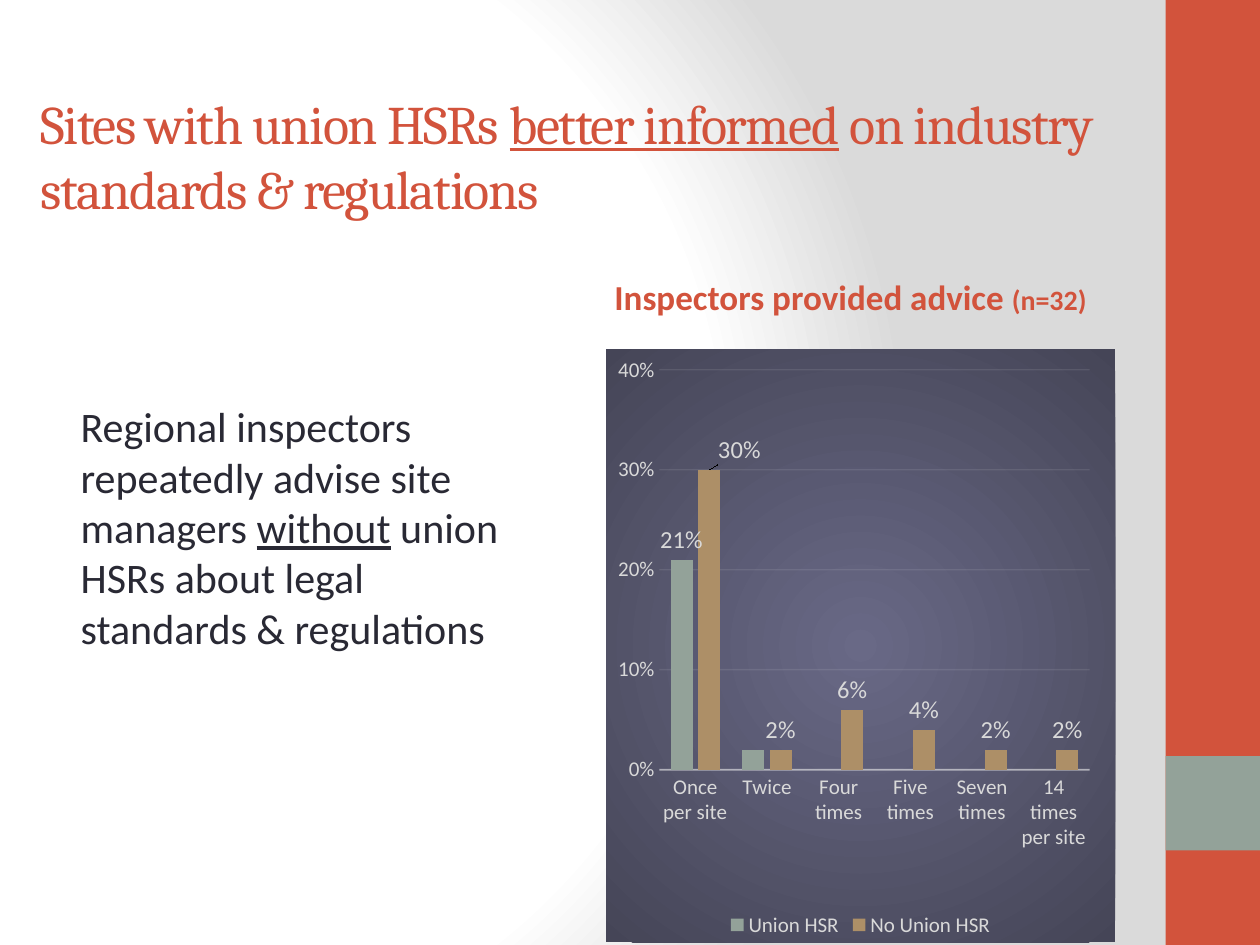
"""Build the slide comparing inspector advice at sites with and without union HSRs."""
from dataclasses import dataclass
from typing import Any, Optional

from lxml import etree
from pptx import Presentation, util as u
from pptx.chart.data import CategoryChartData
from pptx.dml.color import RGBColor
from pptx.enum import chart as ch, shapes, text
from pptx.oxml import ns, parse_xml

SCALE = 9144
COLORS = {
    "red": "D2533C", "sage": "93A299", "tan": "AD8F67", "ink": "292934",
    "label": "D9D9D9", "line": "F2F2F2", "white": "FFFFFF", "grey": "DADADA",
    "slate": "696986", "dusk": "454557",
}


@dataclass
class Box:
    left: int
    top: int
    width: int
    height: int

    def emu(self) -> list[int]:
        return [v * SCALE for v in (self.left, self.top, self.width, self.height)]


@dataclass
class Run:
    text: str
    size: int
    underline: bool = False


@dataclass
class Band:
    box: Box
    color: str


@dataclass
class TextBlock:
    box: Box
    runs: list[Run]
    color: str
    font: str
    frame: dict[str, Any]
    paragraph: dict[str, Any]
    bold: bool = False
    spacing: int = 0
    indent: int = 0


@dataclass
class Series:
    name: str
    values: list[Optional[float]]
    color: str
    point: int
    override: str


BANDS = [
    Band(Box(925, 0, 75, 750), "red"),
    Band(Box(925, 600, 75, 75), "sage"),
]
LEFT, CENTER = text.PP_ALIGN.LEFT, text.PP_ALIGN.CENTER
BLOCKS = [
    TextBlock(
        Box(22, 68, 917, 110),
        [Run("Sites with union HSRs ", 31), Run("better informed", 31, True),
         Run(" on industry standards & regulations", 31)],
        "red", "Cambria", {"vertical_anchor": text.MSO_ANCHOR.MIDDLE},
        {"alignment": LEFT}, spacing=-80),
    TextBlock(
        Box(444, 178, 462, 79),
        [Run("Inspectors provided advice ", 20), Run("(n=32)", 16)],
        "red", "Calibri", {"vertical_anchor": text.MSO_ANCHOR.BOTTOM},
        {"alignment": CENTER}, bold=True),
    TextBlock(
        Box(42, 257, 395, 464),
        [Run("Regional inspectors repeatedly advise site managers ", 24),
         Run("without", 24, True),
         Run(" union HSRs about legal standards & regulations", 24)],
        "ink", "Calibri",
        {"vertical_anchor": text.MSO_ANCHOR.TOP, "margin_top": 61 * SCALE},
        {"alignment": LEFT}, indent=12),
]
CHART_BOX = Box(481, 277, 404, 471)
CATEGORIES = ["Once per site", "Twice", "Four times", "Five times",
              "Seven times", "14 times per site"]
SHIFT = ('<c:layout><c:manualLayout><c:x val="0.06"/><c:y val="0"/></c:manualLayout></c:layout>'
         '<c:numFmt formatCode="0%" sourceLinked="0"/><c:dLblPos val="outEnd"/>'
         '<c:showLegendKey val="0"/><c:showVal val="1"/><c:showCatName val="0"/>'
         '<c:showSerName val="0"/><c:showPercent val="0"/><c:showBubbleSize val="0"/>')
SERIES = [
    Series("Union HSR", [0.21, 0.02, None, None, None, None], "sage", 1, '<c:delete val="1"/>'),
    Series("No Union HSR", [0.3, 0.02, 0.06, 0.04, 0.02, 0.02], "tan", 0, SHIFT),
]


def rgb(name: str) -> RGBColor:
    return RGBColor.from_string(COLORS[name])


def apply(target: Any, values: dict[str, Any]) -> None:
    for name, value in values.items():
        setattr(target, name, value)


def set_font(font: Any, size: int, color: str, **values: Any) -> None:
    apply(font, {"size": u.Pt(size), "name": "Calibri", **values})
    font.color.rgb = rgb(color)


def gradient(stops: list[tuple[int, str]], focus: tuple[int, int, int, int]) -> Any:
    gs = "".join(f'<a:gs pos="{pos * 1000}"><a:srgbClr val="{COLORS[c]}"/></a:gs>'
                 for pos, c in stops)
    rect = " ".join(f'{side}="{v * 1000}"' for side, v in zip("ltrb", focus))
    return parse_xml(f'<a:gradFill {ns.nsdecls("a")} rotWithShape="1"><a:gsLst>{gs}</a:gsLst>'
                     f'<a:path path="circle"><a:fillToRect {rect}/></a:path></a:gradFill>')


def set_background(s: Any) -> None:
    s.background.fill.solid()
    solid = s._element.xpath(".//p:bgPr/a:solidFill")[0]
    fill = gradient([(0, "white"), (75, "white"), (100, "grey")], (20, 50, 100, 50))
    solid.getparent().replace(solid, fill)


def draw_band(s: Any, band: Band) -> None:
    sp = s.shapes.add_shape(shapes.MSO_SHAPE.RECTANGLE, *band.box.emu())
    sp.shadow.inherit = False
    sp.fill.solid()
    sp.fill.fore_color.rgb = rgb(band.color)
    sp.line.fill.background()


def fill_placeholder(sp: Any, block: TextBlock) -> None:
    apply(sp, dict(zip(("left", "top", "width", "height"), block.box.emu())))
    tf = sp.text_frame
    apply(tf, {"word_wrap": True, "auto_size": text.MSO_AUTO_SIZE.NONE, **block.frame})
    p = tf.paragraphs[0]
    apply(p, {"space_before": u.Pt(0), **block.paragraph})
    props = p._p.get_or_add_pPr()
    props.set("marL", str(block.indent * SCALE))
    props.set("indent", "0")
    etree.SubElement(props, ns.qn("a:buNone"))
    for run in block.runs:
        r = p.add_run()
        r.text = run.text
        set_font(r.font, run.size, block.color, name=block.font, bold=block.bold,
                 underline=run.underline)
        r._r.get_or_add_rPr().set("spc", str(block.spacing))


def set_line(line: Any, width: float, alpha: int) -> None:
    line.width = u.Pt(width)
    line.color.rgb = rgb("line")
    color = line._get_or_add_ln().xpath(".//a:srgbClr")[0]
    etree.SubElement(color, ns.qn("a:alpha")).set("val", str(alpha * 1000))


def style_series(ser: Any, data: Series) -> None:
    ser.format.fill.solid()
    ser.format.fill.fore_color.rgb = rgb(data.color)
    labels = ser.data_labels
    apply(labels, {"show_value": True, "number_format": "0%", "number_format_is_linked": False,
                   "position": ch.XL_LABEL_POSITION.OUTSIDE_END})
    set_font(labels.font, 14, "label")
    labels._element.insert(0, parse_xml(
        f'<c:dLbl {ns.nsdecls("c")}><c:idx val="{data.point}"/>{data.override}</c:dLbl>'))
    if data.override == SHIFT:
        set_font(ser.points[data.point].data_label.font, 14, "label")


def set_chart_area(chart: Any) -> None:
    area = parse_xml(f'<c:spPr {ns.nsdecls("c", "a")}><a:ln><a:noFill/></a:ln></c:spPr>')
    area.insert(0, gradient([(0, "slate"), (100, "dusk")], (50, 50, 50, 50)))
    chart._chartSpace.chart.addnext(area)
    plot = chart._chartSpace.xpath(".//c:plotArea")[0]
    for old in plot.findall(ns.qn("c:layout")):
        plot.remove(old)
    sizes = "".join(f'<c:{k} val="{v}"/>' for k, v in
                    {"x": 0.105, "y": 0.035, "w": 0.845, "h": 0.674}.items())
    plot.insert(0, parse_xml(
        f'<c:layout {ns.nsdecls("c")}><c:manualLayout><c:layoutTarget val="inner"/>'
        f'<c:xMode val="edge"/><c:yMode val="edge"/>{sizes}</c:manualLayout></c:layout>'))


def draw_chart(s: Any) -> None:
    data = CategoryChartData(number_format="0%")
    data.categories = CATEGORIES
    for item in SERIES:
        data.add_series(item.name, item.values)
    chart = s.shapes.add_chart(ch.XL_CHART_TYPE.COLUMN_CLUSTERED, *CHART_BOX.emu(), data).chart
    apply(chart, {"has_title": False, "has_legend": True})
    set_font(chart.font, 10, "ink")
    apply(chart.legend, {"position": ch.XL_LEGEND_POSITION.BOTTOM, "include_in_layout": False})
    set_font(chart.legend.font, 12, "label")
    apply(chart.plots[0], {"gap_width": 100, "overlap": -24, "vary_by_categories": False})
    for axis in (chart.category_axis, chart.value_axis):
        apply(axis, {"major_tick_mark": ch.XL_TICK_MARK.NONE,
                     "minor_tick_mark": ch.XL_TICK_MARK.NONE})
        set_font(axis.tick_labels.font, 12, "label")
    set_line(chart.category_axis.format.line, 1, 54)
    value = chart.value_axis
    apply(value, {"minimum_scale": 0, "maximum_scale": 0.4, "major_unit": 0.1,
                  "has_major_gridlines": True})
    apply(value.tick_labels, {"number_format": "0%", "number_format_is_linked": False})
    value.format.line.fill.background()
    set_line(value.major_gridlines.format.line, 0.75, 10)
    for ser, item in zip(chart.plots[0].series, SERIES):
        style_series(ser, item)
    set_chart_area(chart)


def main() -> None:
    prs = Presentation()
    prs.slide_width, prs.slide_height = 1000 * SCALE, 750 * SCALE
    s = prs.slides.add_slide(prs.slide_layouts[3])
    set_background(s)
    for sp, block in zip(list(s.placeholders), BLOCKS):
        fill_placeholder(sp, block)
    for band in BANDS:
        draw_band(s, band)
    draw_chart(s)
    prs.save("out.pptx")


if __name__ == "__main__":
    main()
